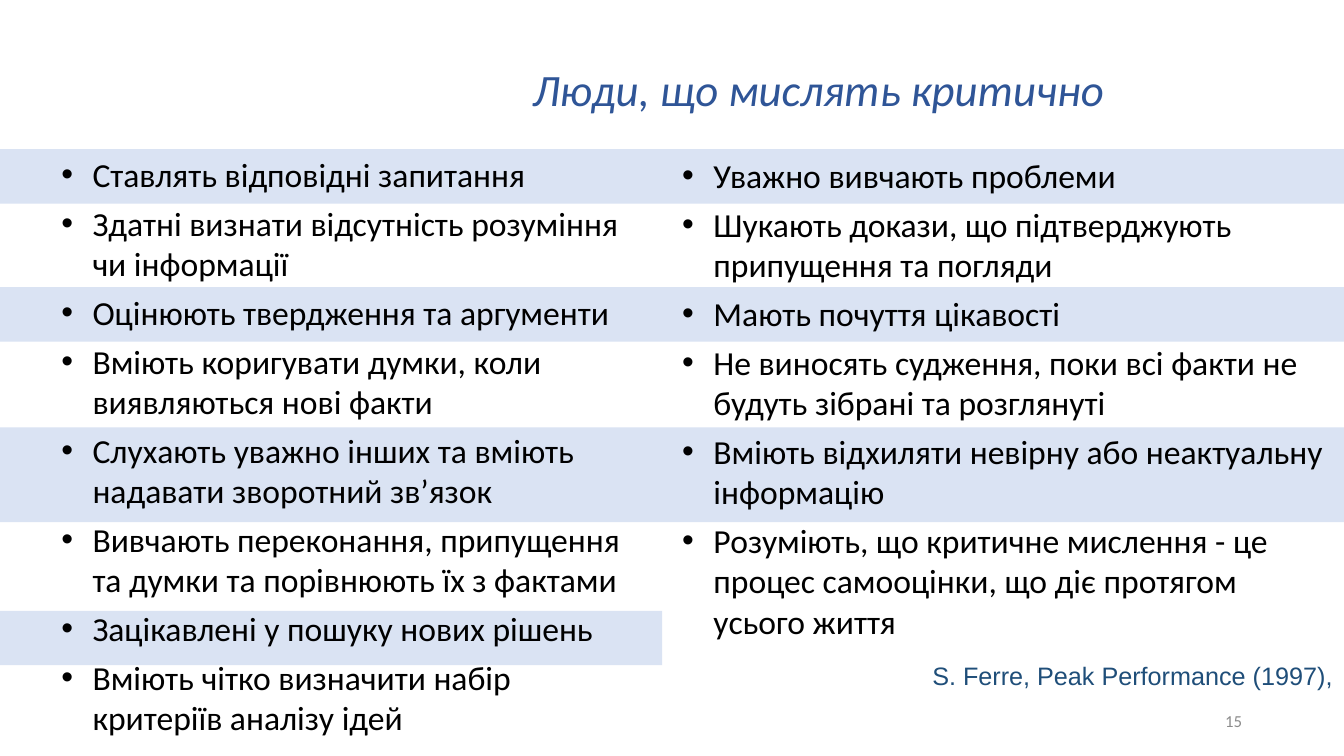
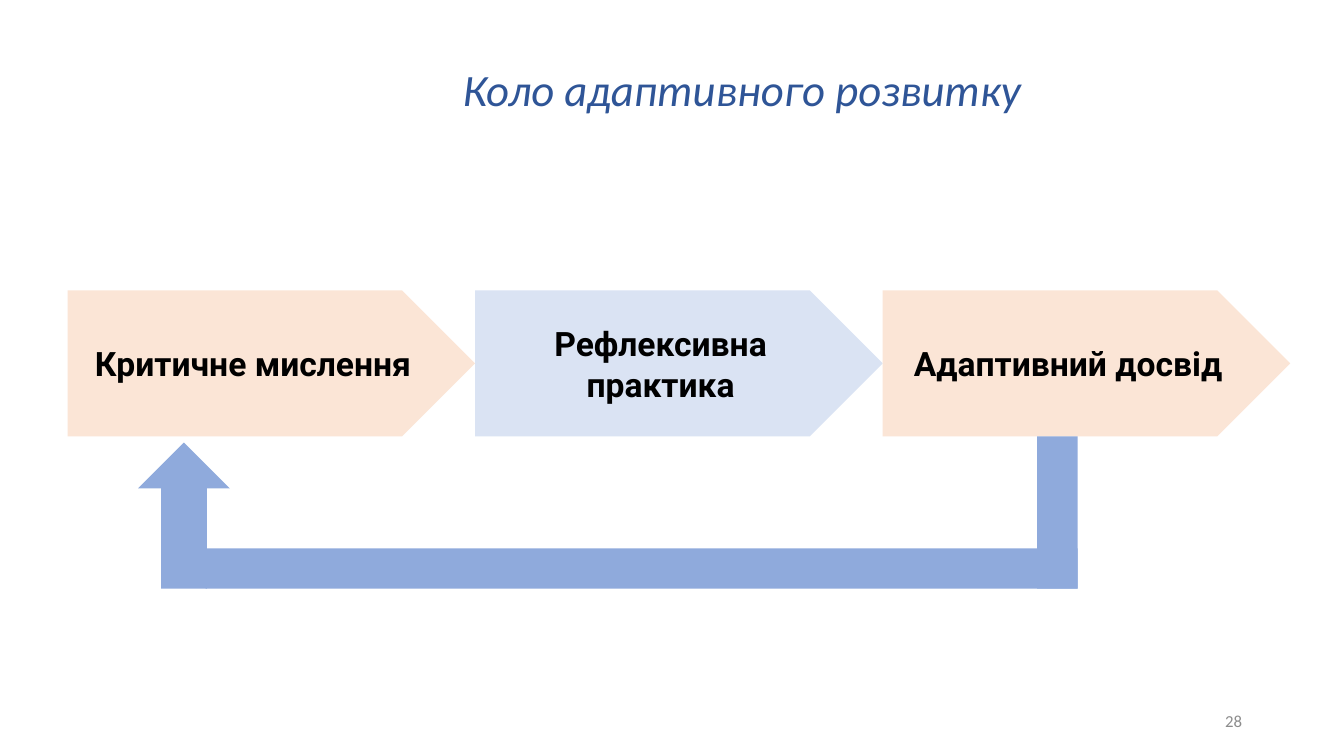
"""Build two slides on critical thinking and the circle of adaptive growth."""
from lxml import etree
from pptx import Presentation
from pptx.dml.color import RGBColor
from pptx.enum.shapes import MSO_SHAPE
from pptx.enum.text import MSO_ANCHOR, PP_ALIGN
from pptx.oxml.ns import qn
from pptx.util import Inches, Pt

RECT, PLATE, ARROW = MSO_SHAPE.RECTANGLE, MSO_SHAPE.PENTAGON, MSO_SHAPE.UP_ARROW
TOP, MIDDLE = MSO_ANCHOR.TOP, MSO_ANCHOR.MIDDLE
LEFT, CENTER, RIGHT = PP_ALIGN.LEFT, PP_ALIGN.CENTER, PP_ALIGN.RIGHT

WIDE, HIGH = 13.333, 7.5
PALE, PEACH, BLUE = "DAE3F3", "FBE5D6", "8FAADC"
NAVY, STEEL, GREY, BLACK = "2F5597", "1F4E79", "8C8C8C", "000000"
INDENT = 0.31

TRAITS = {
    "title": "Люди, що мислять критично",
    "page": "15",
    "source": "S. Ferre, Peak Performance (1997),",
    "bands": [(1.48, 0.54, WIDE), (2.85, 0.54, WIDE),
              (4.24, 0.94, WIDE), (6.06, 0.54, 6.57)],
    "lists": [
        ((0.51, 1.48, 5.77, 6.02), [
            "Ставлять відповідні запитання",
            "Здатні визнати відсутність розуміння чи інформації",
            "Оцінюють твердження та аргументи",
            "Вміють коригувати думки, коли виявляються нові факти",
            "Слухають уважно інших та вміють надавати зворотний зв’язок",
            "Вивчають переконання, припущення та думки та порівнюють їх з фактами",
            "Зацікавлені у пошуку нових рішень",
            "Вміють чітко визначити набір критеріїв аналізу ідей",
        ]),
        ((6.67, 1.49, 6.57, 4.96), [
            "Уважно вивчають проблеми",
            "Шукають докази, що підтверджують припущення та погляди",
            "Мають почуття цікавості",
            "Не виносять судження, поки всі факти не будуть зібрані та розглянуті",
            "Вміють відхиляти невірну або неактуальну інформацію",
            "Розуміють, що критичне мислення - це процес самооцінки, що діє протягом усього життя",
        ]),
    ],
}
CIRCLE = {
    "title": "Коло адаптивного розвитку",
    "page": "28",
    "steps": [("Критичне мислення", PEACH), ("Рефлексивна практика", PALE),
              ("Адаптивний досвід", PEACH)],
}


def color(code):
    return RGBColor.from_string(code)


def write(frame, lines, size, ink, face="Calibri", align=LEFT, anchor=TOP,
          bold=False, italic=False, bullet=False, lead=None):
    frame.text = "\n".join(lines)
    frame.word_wrap = True
    frame.vertical_anchor = anchor
    for para in frame.paragraphs:
        para.alignment = align
        para.line_spacing = lead
        if bullet:
            para.space_after = Pt(6)
            props = para._p.get_or_add_pPr()
            props.set("marL", str(Inches(INDENT)))
            props.set("indent", str(-Inches(INDENT)))
            etree.SubElement(props, qn("a:buFont")).set("typeface", "Arial")
            etree.SubElement(props, qn("a:buChar")).set("char", "•")
        for run in para.runs:
            font = run.font
            font.name, font.size = face, Pt(size)
            font.bold, font.italic = bold, italic
            font.color.rgb = color(ink)


def label(slide, box, lines, size, ink, **style):
    frame = slide.shapes.add_textbox(*map(Inches, box)).text_frame
    write(frame, lines, size, ink, **style)


def block(slide, kind, box, fill):
    shape = slide.shapes.add_shape(kind, *map(Inches, box))
    shape.shadow.inherit = False
    shape.fill.solid()
    shape.fill.fore_color.rgb = color(fill)
    shape.line.fill.background()
    return shape


def start(deck, data, left, width, align):
    slide = deck.slides.add_slide(deck.slide_layouts[6])
    label(slide, (left, 0.29, width, 1.24), [data["title"]], 32, NAVY,
          align=align, anchor=MIDDLE, italic=True, lead=0.9)
    label(slide, (9.42, 6.95, 3, 0.4), [data["page"]], 12, GREY,
          align=RIGHT, anchor=MIDDLE)
    return slide


def traits(deck):
    slide = start(deck, TRAITS, 3.82, 8.6, CENTER)
    for top, height, width in TRAITS["bands"]:
        block(slide, RECT, (0, top, width, height), PALE)
    for box, lines in TRAITS["lists"]:
        label(slide, box, lines, 24, BLACK, bullet=True)
    label(slide, (9.15, 6.5, 4.41, 0.4), [TRAITS["source"]], 18, STEEL, face="Arial")


def circle(deck):
    slide = start(deck, CIRCLE, 4.49, 7.92, LEFT)
    left, top, height = 0.67, 2.88, 1.45
    steps = CIRCLE["steps"]
    width = (12.8 - left) / len(steps)
    for i, (text, fill) in enumerate(steps):
        plate = block(slide, PLATE, (left + i * width, top, width, height), fill)
        write(plate.text_frame, [text], 24, BLACK, face="Roboto",
              align=CENTER, anchor=MIDDLE, bold=True)
    base, thick, end = 5.84, 0.4, 10.69
    foot = top + height
    block(slide, ARROW, (1.37, base - height, 0.91, height), BLUE)
    block(slide, RECT, (2.04, base - thick, end - 2.04, thick), BLUE)
    block(slide, RECT, (end - thick, foot, thick, base - foot), BLUE)


def main():
    deck = Presentation()
    deck.slide_width, deck.slide_height = Inches(WIDE), Inches(HIGH)
    traits(deck)
    circle(deck)
    deck.save("out.pptx")


if __name__ == "__main__":
    main()
